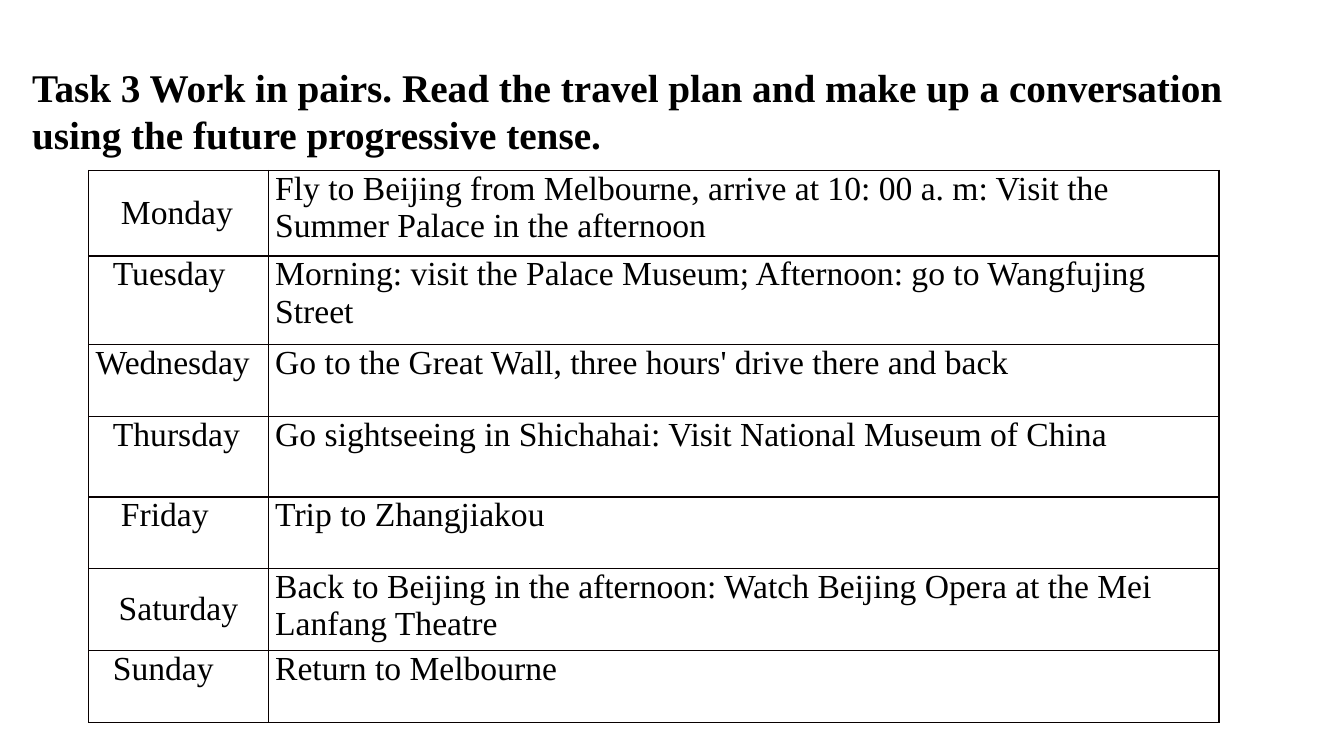
from lxml.etree import SubElement
from pptx import Presentation
from pptx.dml.color import RGBColor
from pptx.enum.text import MSO_ANCHOR as ANCHOR, MSO_AUTO_SIZE as AUTO, PP_ALIGN as ALIGN
from pptx.oxml.ns import qn
from pptx.util import Inches, Pt

FONT = "Times New Roman"
BLACK = "000000"
BORDER = "080000"
PAD = 0.07
COL_WIDTHS = [1.78, 9.43]

TITLE = ("Task 3 Work in pairs. Read the travel plan and make up a conversation "
         "using the future progressive tense.")

# Day, indent of the day (None = centred), row height, day in the middle, plan
PLAN = [
    ("Monday", 0.25, 0.85, True,
     "Fly to Beijing from Melbourne, arrive at 10: 00 a. m: Visit the "
     "Summer Palace in the afternoon"),
    ("Tuesday", 0.17, 0.88, False,
     "Morning: visit the Palace Museum; Afternoon: go to Wangfujing Street"),
    ("Wednesday", 0, 0.71, False,
     "Go to the Great Wall, three hours' drive there and back"),
    ("Thursday", 0.17, 0.8, False,
     "Go sightseeing in Shichahai: Visit National Museum of China"),
    ("Friday", 0.25, 0.71, False, "Trip to Zhangjiakou"),
    ("Saturday", None, 0.81, True,
     "Back to Beijing in the afternoon: Watch Beijing Opera at the Mei Lanfang Theatre"),
    ("Sunday", 0.17, 0.72, False, "Return to Melbourne"),
]


def rgb(color):
    return RGBColor.from_string(color)


def style(p, size, bold=False):
    for r in p.runs:
        r.font.name = FONT
        r.font.size = Pt(size)
        r.font.bold = bold
        r.font.color.rgb = rgb(BLACK)


def add_borders(cell, color, width):
    # Border lines must come before the fill in the cell properties
    tc_pr = cell._tc.get_or_add_tcPr()
    for i, side in enumerate(("lnL", "lnR", "lnT", "lnB")):
        ln = SubElement(tc_pr, qn("a:" + side), w=str(Pt(width)))
        fill = SubElement(ln, qn("a:solidFill"))
        SubElement(fill, qn("a:srgbClr"), val=color)
        tc_pr.insert(i, ln)


def fill_cell(cell, text, indent=0, anchor=ANCHOR.TOP):
    cell.fill.background()
    add_borders(cell, BORDER, 1)
    cell.margin_left = Inches(PAD + (indent or 0))
    cell.margin_right = Inches(PAD)
    cell.margin_top = cell.margin_bottom = 0
    cell.vertical_anchor = anchor
    cell.text_frame.text = text
    p = cell.text_frame.paragraphs[0]
    p.alignment = ALIGN.CENTER if indent is None else ALIGN.LEFT
    style(p, 24)


def add_title(s, x, y, w, h):
    tf = s.shapes.add_textbox(Inches(x), Inches(y), Inches(w), Inches(h)).text_frame
    tf.word_wrap = True
    tf.auto_size = AUTO.SHAPE_TO_FIT_TEXT
    tf.text = TITLE
    style(tf.paragraphs[0], 28, bold=True)


def add_plan(s, x, y, w, h):
    frame = s.shapes.add_table(len(PLAN), len(COL_WIDTHS),
                               Inches(x), Inches(y), Inches(w), Inches(h))
    table = frame.table
    table.first_row = table.horz_banding = False
    for col, width in zip(table.columns, COL_WIDTHS):
        col.width = Inches(width)
    for row, (day, indent, height, middle, plan) in zip(table.rows, PLAN):
        row.height = Inches(height)
        fill_cell(row.cells[0], day, indent, ANCHOR.MIDDLE if middle else ANCHOR.TOP)
        fill_cell(row.cells[1], plan)


def main():
    prs = Presentation()
    prs.slide_width, prs.slide_height = Inches(13.33), Inches(7.5)
    s = prs.slides.add_slide(prs.slide_layouts[6])
    add_title(s, 0.22, 0.58, 12.37, 1.04)
    add_plan(s, 0.88, 1.69, 11.22, 5.47)
    prs.save("out.pptx")


if __name__ == "__main__":
    main()
